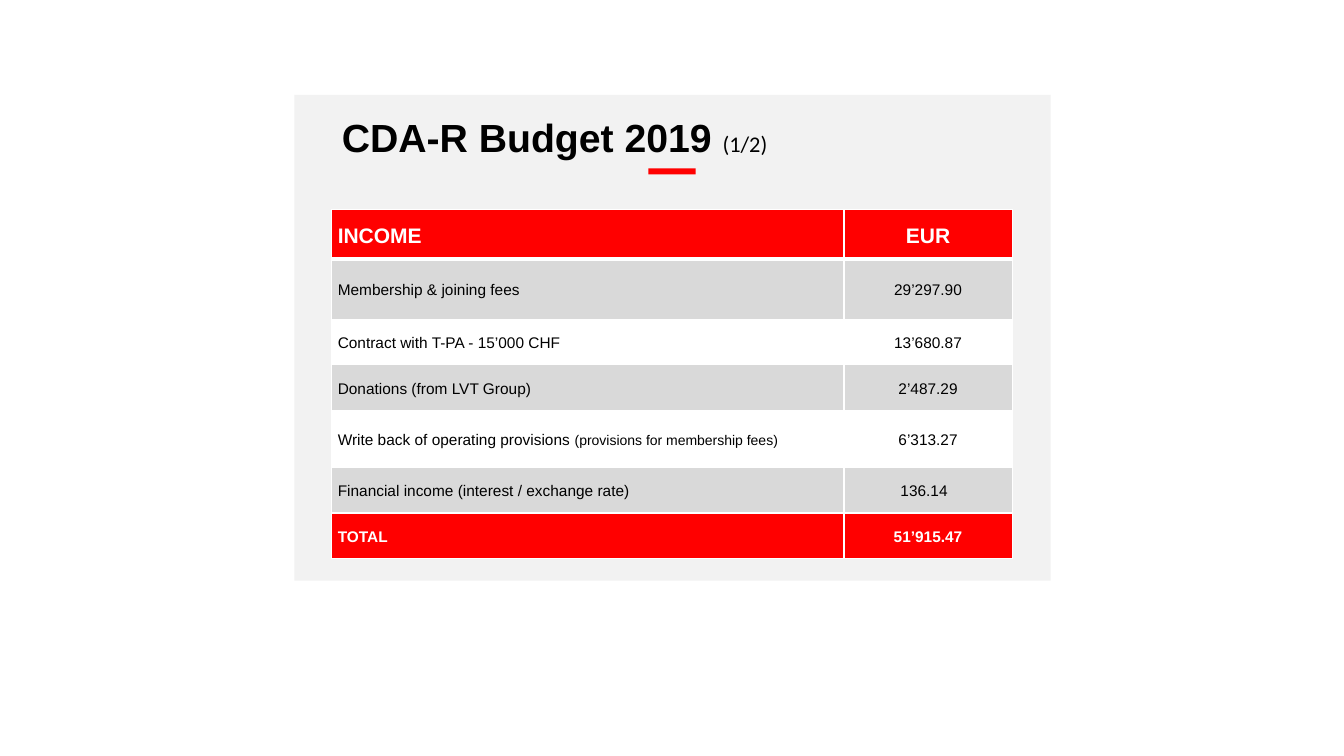
from lxml import etree
from pptx import Presentation
from pptx.dml.color import RGBColor
from pptx.enum.shapes import MSO_SHAPE
from pptx.enum.text import MSO_ANCHOR, MSO_AUTO_SIZE, PP_ALIGN
from pptx.oxml.ns import qn
from pptx.util import Inches, Pt

RECT = MSO_SHAPE.RECTANGLE
MIDDLE = MSO_ANCHOR.MIDDLE
LEFT, CENTER = PP_ALIGN.LEFT, PP_ALIGN.CENTER
RED, GREY, WHITE, BLACK = "FF0000", "D9D9D9", "FFFFFF", "000000"


def paint(fill, color):
    fill.solid()
    fill.fore_color.rgb = RGBColor.from_string(color)


def edge(cell, side, width):
    """Add a white border; call before the cell gets its fill."""
    line = etree.SubElement(cell._tc.get_or_add_tcPr(), qn("a:" + side),
                            w=str(Pt(width)))
    solid = etree.SubElement(line, qn("a:solidFill"))
    etree.SubElement(solid, qn("a:srgbClr"), val=WHITE)


deck = Presentation()
deck.slide_width, deck.slide_height = Inches(13.33), Inches(7.5)
slide = deck.slides.add_slide(deck.slide_layouts[5])
title = slide.shapes.title

# Panel and accent bar
for box, color in [((2.92, 0.94, 7.5, 4.82), "F2F2F2"),
                   ((6.43, 1.67, 0.47, 0.06), RED)]:
    shape = slide.shapes.add_shape(RECT, *map(Inches, box))
    shape.shadow.inherit = False
    shape.line.fill.background()
    paint(shape.fill, color)
    if color != RED:
        title._element.addprevious(shape._element)  # panel goes behind title

# Title
title.left, title.top = Inches(3.29), Inches(1.16)
title.width, title.height = Inches(6.75), Inches(0.46)
frame = title.text_frame
frame.auto_size = MSO_AUTO_SIZE.NONE
frame.vertical_anchor = MIDDLE
head = frame.paragraphs[0]
head.alignment, head.line_spacing = LEFT, 0.9
for text, size, face, bold in [("CDA-R Budget 2019 ", 28, "Arial", True),
                               ("(1/2)", 16, "Calibri", False)]:
    run = head.add_run()
    run.text = text
    run.font.size, run.font.name, run.font.bold = Pt(size), face, bold
    run.font.color.rgb = RGBColor.from_string(BLACK)

# Income table: label, amount, row height
rows = [
    ("INCOME", "EUR", 0.49),
    ("Membership & joining fees", "29’297.90", 0.6),
    ("Contract with T-PA - 15’000 CHF", "13’680.87", 0.45),
    ("Donations (from LVT Group)", "2’487.29", 0.45),
    ("Write back of operating provisions ", "6’313.27", 0.57),
    ("Financial income (interest / exchange rate)", "136.14", 0.45),
    ("TOTAL", "51’915.47", 0.45),
]
last = len(rows) - 1
table = slide.shapes.add_table(len(rows), 2, Inches(3.29), Inches(2.08),
                               Inches(6.75), Inches(3.46)).table
table.columns[0].width, table.columns[1].width = Inches(5.08), Inches(1.67)

for i, (label, amount, height) in enumerate(rows):
    table.rows[i].height = Inches(height)
    strong = i in (0, last)
    back = RED if strong else GREY if i % 2 else WHITE
    for j, text in enumerate((label, amount)):
        cell = table.cell(i, j)
        cell.vertical_anchor = MIDDLE
        cell.margin_left = cell.margin_right = Inches(0.06)
        cell.margin_top = cell.margin_bottom = 0
        for side, width in [("lnL", 1), ("lnR", 1),
                            ("lnT", 3 if i == 1 else 1),
                            ("lnB", 3 if i == 0 else 1)]:
            edge(cell, side, width)
        paint(cell.fill, back)
        para = cell.text_frame.paragraphs[0]
        para.add_run().text = text
        para.alignment = CENTER if j else LEFT
        para.line_spacing = 1.15
        font = para.font
        font.name, font.bold = "Arial", strong
        font.size = Pt(11 if i else 15)
        font.color.rgb = RGBColor.from_string(WHITE if strong else BLACK)

# Smaller remark, and the short amount set slightly to the left
note = table.cell(4, 0).text_frame.paragraphs[0].add_run()
note.text = "(provisions for membership fees)"
note.font.size = Pt(10)
table.cell(5, 1).margin_right = Inches(0.14)

deck.save("out.pptx")
